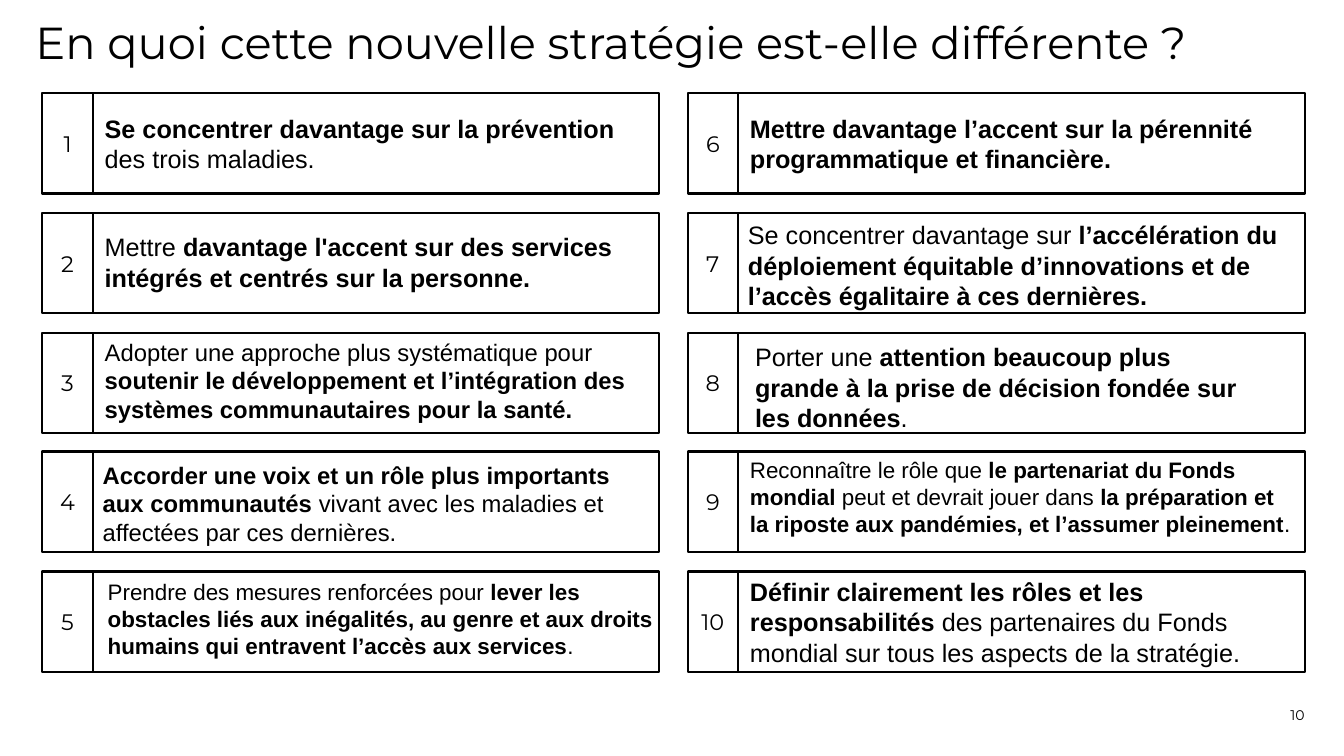
import pptx
import pptx.util
import pptx.dml.color
import pptx.enum.shapes
import pptx.enum.text

PX = 9144
COLORS = {"ink": "000000", "paper": "FFFFFF"}
RECT = pptx.enum.shapes.MSO_SHAPE.RECTANGLE
ALIGN = pptx.enum.text.PP_ALIGN
ANCHOR = pptx.enum.text.MSO_ANCHOR

points = [
    (94, 15, 560, 71, 18, "*Se concentrer davantage sur la prévention *des trois maladies."),
    (94, 14, 560, 71, 18, "Mettre *davantage l'accent sur des services intégrés et centrés sur la personne.*"),
    (94, 0, 559, 96, 17, "Adopter une approche plus systématique pour *soutenir le développement et l’intégration des systèmes communautaires pour la santé.*"),
    (92, 4, 562, 96, 17, "*Accorder une voix et un rôle plus importants aux communautés *vivant avec les maladies et affectées par ces dernières."),
    (97, 2, 585, 91, 16, "Prendre des mesures renforcées pour *lever les obstacles liés aux inégalités, au genre et aux droits humains qui entravent l’accès aux services*."),
    (94, 15, 560, 71, 18, "*Mettre davantage l’accent sur la pérennité programmatique et financière.*"),
    (92, 2, 560, 101, 18, "Se concentrer davantage sur *l’accélération du déploiement équitable d’innovations et de l’accès égalitaire à ces dernières.*"),
    (99, 4, 514, 101, 18, "Porter une *attention beaucoup plus grande à la prise de décision fondée sur les données*."),
    (94, 0, 560, 91, 16, "Reconnaître le rôle que *le partenariat du Fonds mondial *peut et devrait jouer dans *la préparation et la riposte aux pandémies, et l’assumer pleinement*."),
    (94, 0, 560, 101, 18, "*Définir clairement les rôles et les responsabilités* des partenaires du Fonds mondial sur tous les aspects de la stratégie."),
]


def style(para, face, size):
    para.font.name = face
    para.font.size = pptx.util.Pt(size)
    para.font.color.rgb = pptx.dml.color.RGBColor.from_string(COLORS["ink"])


def draw_box(left, top, width):
    box = slide.shapes.add_shape(RECT, left * PX, top * PX, width * PX, 100 * PX)
    box.shadow.inherit = False
    box.fill.background()
    box.line.color.rgb = pptx.dml.color.RGBColor.from_string(COLORS["ink"])
    box.line.width = pptx.util.Pt(1.5)
    return box


deck = pptx.Presentation()
deck.slide_width = 1333 * PX
deck.slide_height = 750 * PX
slide = deck.slides.add_slide(deck.slide_layouts[5])

title = slide.shapes.title
title.left, title.top, title.width, title.height = 35 * PX, 21 * PX, 1294 * PX, 71 * PX
page = slide.shapes.add_textbox(1196 * PX, 678 * PX, 98 * PX, 40 * PX)
heads = [
    (title, "En quoi cette nouvelle stratégie est-elle différente\u00a0?".replace("\u00a0", " "), 32, ALIGN.LEFT, ANCHOR.TOP),
    (page, "10", 10, ALIGN.RIGHT, ANCHOR.BOTTOM),
]
for shape, words, size, align, anchor in heads:
    frame = shape.text_frame
    frame.text = words
    frame.word_wrap = True
    frame.auto_size = pptx.enum.text.MSO_AUTO_SIZE.NONE
    frame.vertical_anchor = anchor
    frame.margin_left = frame.margin_right = frame.margin_top = frame.margin_bottom = 0
    para = frame.paragraphs[0]
    para.alignment = align
    style(para, "Montserrat", size)
title.text_frame.paragraphs[0].line_spacing = 0.9

for index, (left, drop, width, height, size, words) in enumerate(points):
    col, row = divmod(index, 5)
    shift = 640 * col
    top = 92 + round(118.75 * row)

    draw_box(59 + shift, top, 595)
    badge = draw_box(42 + shift, top, 50)
    badge.fill.solid()
    badge.fill.fore_color.rgb = pptx.dml.color.RGBColor.from_string(COLORS["paper"])
    frame = badge.text_frame
    frame.text = str(index + 1)
    frame.vertical_anchor = ANCHOR.MIDDLE
    frame.paragraphs[0].alignment = ALIGN.CENTER
    style(frame.paragraphs[0], "Montserrat", 16)

    label = slide.shapes.add_textbox((left + shift) * PX, (top + drop) * PX, width * PX, height * PX)
    label.text_frame.word_wrap = True
    para = label.text_frame.paragraphs[0]
    style(para, "Arial", size)
    for turn, part in enumerate(words.split("*")):
        if part:
            run = para.add_run()
            run.text = part
            run.font.bold = turn % 2 == 1

deck.save("out.pptx")
